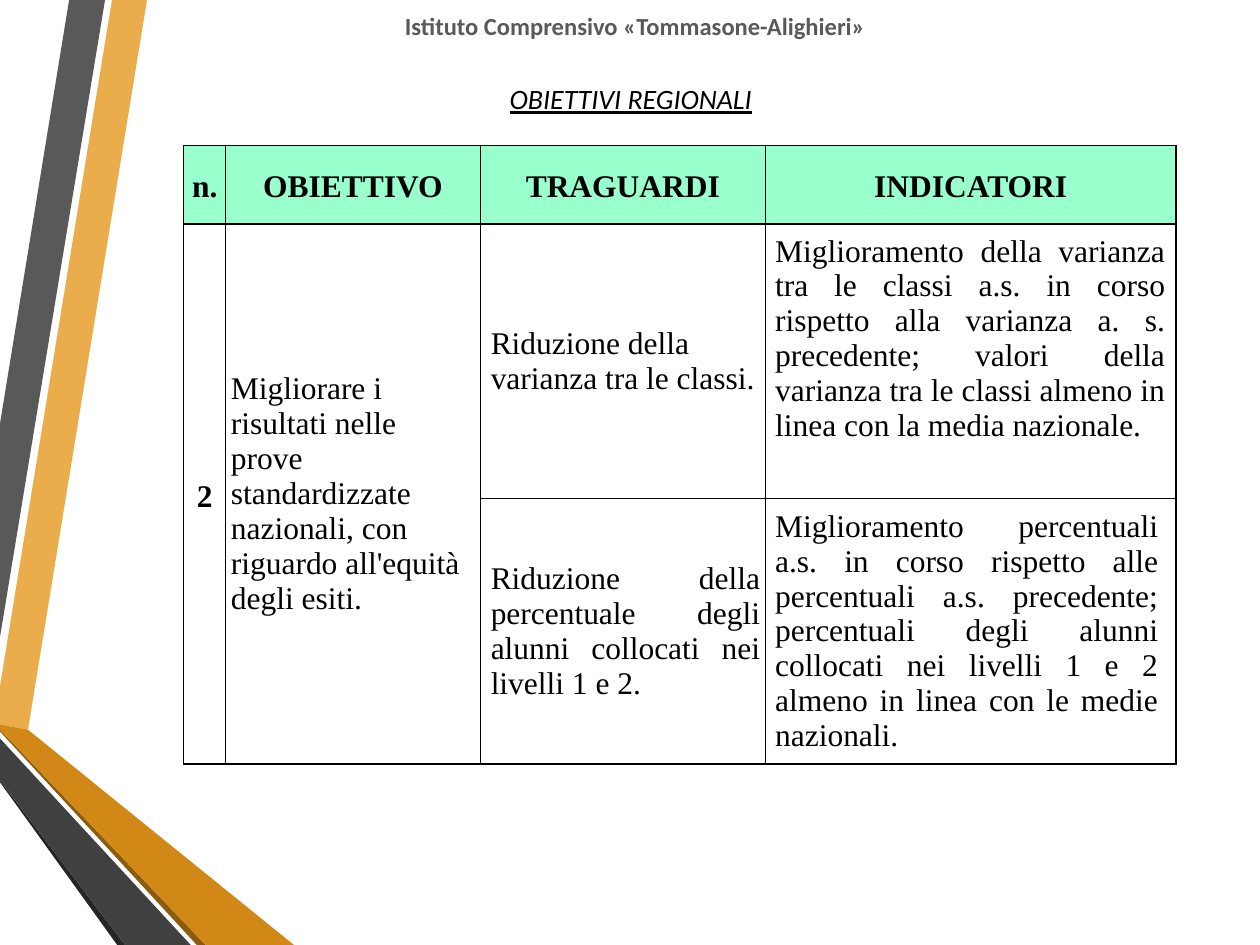
from dataclasses import dataclass

from lxml import etree
from pptx import Presentation
from pptx.dml.color import RGBColor
from pptx.enum.text import MSO_ANCHOR, MSO_AUTO_SIZE, PP_ALIGN
from pptx.oxml.ns import qn
from pptx.util import Pt

LEFT, CENTER, JUSTIFY = PP_ALIGN.LEFT, PP_ALIGN.CENTER, PP_ALIGN.JUSTIFY
TOP, MIDDLE = MSO_ANCHOR.TOP, MSO_ANCHOR.MIDDLE
NO_AUTOFIT = MSO_AUTO_SIZE.NONE


@dataclass(frozen=True)
class Theme:
    heading_font: str = "Calibri"
    table_font: str = "Times New Roman"
    title_size: int = 16
    school_size: int = 14
    table_size: int = 18
    ink: str = "000000"
    grey: str = "595959"
    header_fill: str = "99FFCC"
    light_gold: str = "EBAC4B"
    gold: str = "D18817"
    dark_gold: str = "8B5B10"
    charcoal: str = "404040"
    black: str = "262626"


theme = Theme()


def style(paragraph, font_name, size, color, align, bold=False):
    paragraph.alignment = align
    font = paragraph.font
    font.name, font.size, font.bold = font_name, Pt(size), bold
    font.color.rgb = RGBColor.from_string(color)


def add_borders(cell, color, width):
    properties = cell._tc.get_or_add_tcPr()
    for side in ("a:lnL", "a:lnR", "a:lnT", "a:lnB"):
        line = etree.SubElement(properties, qn(side), w=str(Pt(width)))
        fill = etree.SubElement(line, qn("a:solidFill"))
        etree.SubElement(fill, qn("a:srgbClr"), val=color)


prs = Presentation()
prs.slide_width, prs.slide_height = Pt(720), Pt(540)
slide = prs.slides.add_slide(prs.slide_layouts[5])

# Folded ribbons along the left edge, from back to front
ribbons = [
    (theme.light_gold, [(0, 392), (0, 414), (16, 417), (84, 0), (64, 0)]),
    (theme.grey, [(60, 0), (39.5, 0), (0, 242), (0, 364)]),
    (theme.black, [(0, 446), (0, 447), (67, 540), (71.5, 540)]),
    (theme.dark_gold, [(0, 417), (0, 418), (112.5, 540), (117.5, 540)]),
    (theme.gold, [(0, 417), (117.5, 540), (168, 540), (16, 417), (0, 414)]),
    (theme.charcoal, [(0, 446), (71.5, 540), (109, 540), (0, 422)]),
]
for color, corners in ribbons:
    points = [(Pt(x), Pt(y)) for x, y in corners]
    builder = slide.shapes.build_freeform(*points[0])
    builder.add_line_segments(points[1:], close=True)
    ribbon = builder.convert_to_shape()
    ribbon.shadow.inherit = False
    ribbon.fill.solid()
    ribbon.fill.fore_color.rgb = RGBColor.from_string(color)
    ribbon.line.fill.background()

# Title and school name
title = slide.shapes.title
title.left, title.top, title.width, title.height = Pt(65.5), Pt(43), Pt(590), Pt(27)
title.text_frame.text = "OBIETTIVI REGIONALI"
title_line = title.text_frame.paragraphs[0]
style(title_line, theme.heading_font, theme.title_size, theme.ink, CENTER)
title_line.font.italic = title_line.font.underline = True

school = slide.shapes.add_textbox(Pt(82), Pt(3), Pt(562), Pt(24))
school.text_frame.text = "Istituto Comprensivo «Tommasone-Alighieri»"
style(school.text_frame.paragraphs[0], theme.heading_font, theme.school_size,
      theme.grey, CENTER, bold=True)

for heading in (title, school):
    frame = heading.text_frame
    frame.word_wrap, frame.auto_size, frame.vertical_anchor = True, NO_AUTOFIT, TOP

# Table grid
column_widths = [24, 145.5, 163, 234.5]
row_heights = [45, 157, 151.5]
objectives = slide.shapes.add_table(
    len(row_heights), len(column_widths), Pt(105), Pt(83),
    Pt(sum(column_widths)), Pt(sum(row_heights))).table
objectives.first_row = objectives.horz_banding = False
for column, width in zip(objectives.columns, column_widths):
    column.width = Pt(width)
for row, height in zip(objectives.rows, row_heights):
    row.height = Pt(height)
for cell in objectives.iter_cells():
    add_borders(cell, theme.ink, 1)
    cell.fill.background()
for column in (0, 1):
    objectives.cell(1, column).merge(objectives.cell(2, column))

# Header row and row number
labels = [(0, 0, "n."), (0, 1, "OBIETTIVO"), (0, 2, "TRAGUARDI"),
          (0, 3, "INDICATORI"), (1, 0, "2")]
for row, column, text in labels:
    cell = objectives.cell(row, column)
    cell.text = text
    cell.vertical_anchor = MIDDLE
    cell.margin_left = cell.margin_right = Pt(3)
    cell.margin_top = cell.margin_bottom = 0
    label = cell.text_frame.paragraphs[0]
    style(label, theme.table_font, theme.table_size, theme.ink, CENTER, bold=True)
    label.line_spacing = 1.15
    if row == 0:
        cell.fill.solid()
        cell.fill.fore_color.rgb = RGBColor.from_string(theme.header_fill)

# Goal, targets and indicators: row, column, alignment, left, right, bottom margin
entries = [
    (1, 1, LEFT, 3, 3, 0,
     "Migliorare i risultati nelle prove standardizzate nazionali, "
     "con riguardo all'equità degli esiti."),
    (1, 2, LEFT, 6, 3, 0, "Riduzione della varianza tra le classi."),
    (1, 3, JUSTIFY, 5.5, 6, 26,
     "Miglioramento della varianza tra le classi a.s. in corso rispetto alla "
     "varianza a. s. precedente; valori della varianza tra le classi almeno "
     "in linea con la media nazionale."),
    (2, 2, JUSTIFY, 6, 3, 0,
     "Riduzione della percentuale degli alunni collocati nei livelli 1 e 2."),
    (2, 3, JUSTIFY, 5.5, 10, 0,
     "Miglioramento percentuali a.s. in corso rispetto alle percentuali a.s. "
     "precedente; percentuali degli alunni collocati nei livelli 1 e 2 almeno "
     "in linea con le medie nazionali."),
]
for row, column, align, left, right, bottom, text in entries:
    cell = objectives.cell(row, column)
    cell.text = text
    cell.vertical_anchor = MIDDLE
    cell.margin_left, cell.margin_right = Pt(left), Pt(right)
    cell.margin_top, cell.margin_bottom = 0, Pt(bottom)
    entry = cell.text_frame.paragraphs[0]
    style(entry, theme.table_font, theme.table_size, theme.ink, align)
    entry.space_after = Pt(6)

prs.save("out.pptx")
